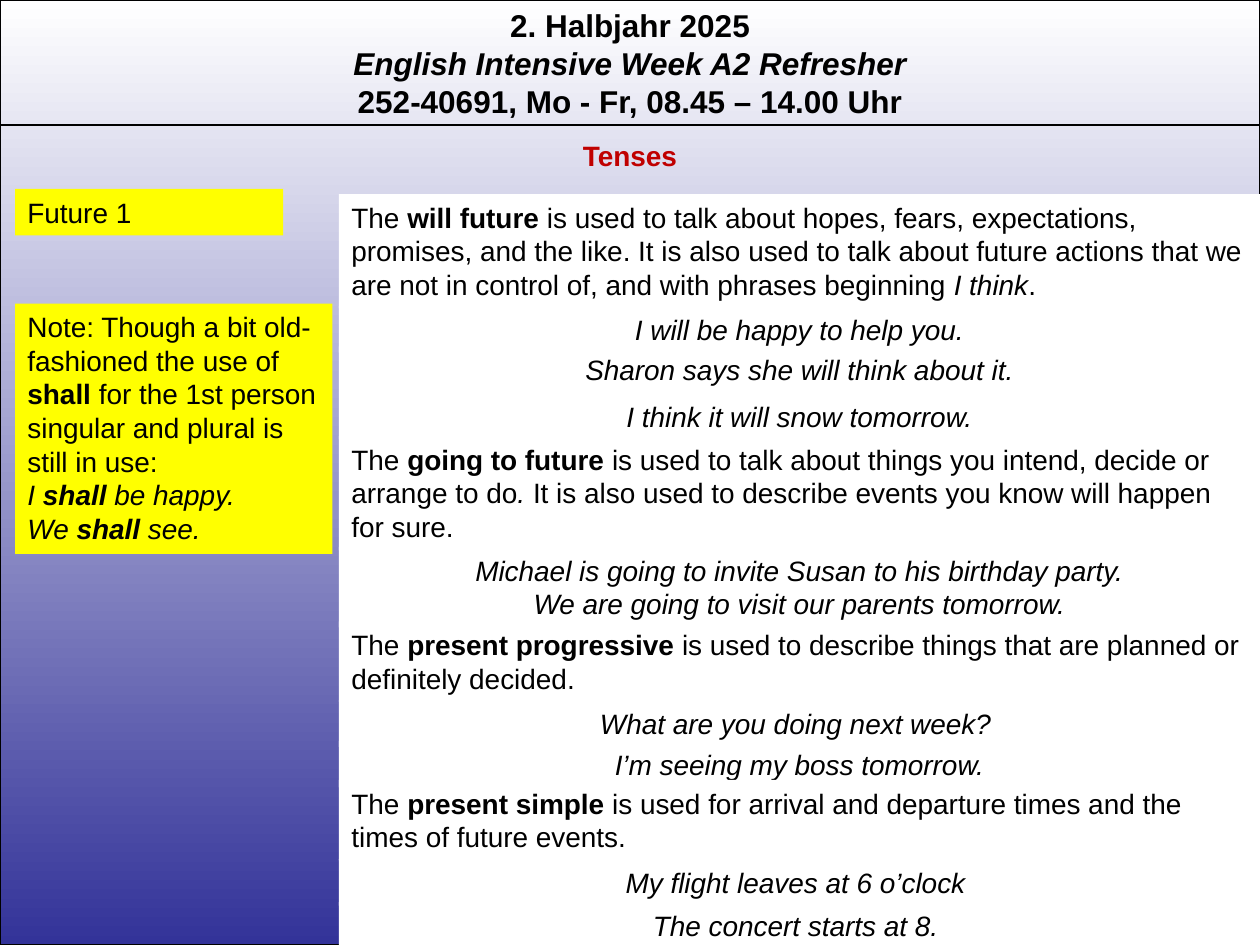
from dataclasses import dataclass

from lxml import etree
from pptx import Presentation
from pptx.dml.color import RGBColor
from pptx.enum import shapes, text
from pptx.oxml.ns import qn
from pptx.util import Pt


@dataclass(frozen=True)
class Theme:
    font: str = "Arial"
    title_size: int = 18
    body_size: int = 16
    ink: str = "000000"
    accent: str = "C00000"
    paper: str = "FFFFFF"
    mark: str = "FFFF00"
    deep: str = "333399"
    line: float = 0.75


LEFT, CENTER = text.PP_ALIGN.LEFT, text.PP_ALIGN.CENTER
WIDTH, HEIGHT = 720, 540


def box_height(lines):
    return 7.2 + 19.4 * lines


class SlideBuilder:
    def __init__(self, prs, theme):
        self.theme = theme
        self.s = prs.slides.add_slide(prs.slide_layouts[5])

    def set_text(self, sp, paragraphs, align=LEFT, size=None, color=None, bold=False):
        """Fill a shape; a paragraph is a list of (text, style), style holding b and/or i."""
        tf = sp.text_frame
        frame_format = {"word_wrap": True, "auto_size": text.MSO_AUTO_SIZE.SHAPE_TO_FIT_TEXT,
                        "vertical_anchor": text.MSO_ANCHOR.TOP}
        for name, value in frame_format.items():
            setattr(tf, name, value)
        for i, runs in enumerate(paragraphs):
            p = tf.paragraphs[0] if i == 0 else tf.add_paragraph()
            p.alignment = align
            for words, style in runs:
                r = p.add_run()
                r.text = words
                font_format = {"name": self.theme.font, "size": Pt(size or self.theme.body_size),
                               "bold": bold or "b" in style, "italic": "i" in style}
                for name, value in font_format.items():
                    setattr(r.font, name, value)
                r.font.color.rgb = RGBColor.from_string(color or self.theme.ink)

    def title(self, paragraphs, height):
        sp = self.s.shapes.title
        place = {"left": 0, "top": 0, "width": Pt(WIDTH), "height": Pt(height)}
        for name, value in place.items():
            setattr(sp, name, value)
        self.set_text(sp, paragraphs, CENTER, self.theme.title_size, bold=True)

    def rect(self, left, top, width, height):
        sp = self.s.shapes.add_shape(shapes.MSO_SHAPE.RECTANGLE,
                                     Pt(left), Pt(top), Pt(width), Pt(height))
        sp.shadow.inherit = False
        return sp

    def backdrop(self):
        """Full-slide gradient panel, placed behind the title."""
        sp = self.rect(0, 0, WIDTH, HEIGHT)
        sp.fill.gradient()
        sp.fill.gradient_angle = 270
        colors = (self.theme.paper, self.theme.deep)
        for position, (stop, color) in enumerate(zip(sp.fill.gradient_stops, colors)):
            stop.position = position
            stop.color.rgb = RGBColor.from_string(color)
        self.outline(sp)
        self.s.shapes.title.element.addprevious(sp.element)

    def outline(self, sp):
        sp.line.color.rgb = RGBColor.from_string(self.theme.ink)
        sp.line.width = Pt(self.theme.line)

    def rule(self, y):
        line = self.s.shapes.add_connector(shapes.MSO_CONNECTOR.STRAIGHT,
                                           0, Pt(y), Pt(WIDTH), Pt(y))
        self.outline(line)
        etree.SubElement(line.element.spPr, qn("a:effectLst"))

    def heading(self, words, top):
        sp = self.s.shapes.add_textbox(0, Pt(top), Pt(WIDTH), Pt(box_height(1)))
        self.set_text(sp, [[(words, "")]], CENTER, color=self.theme.accent, bold=True)

    def panel(self, left, top, width, lines, fill, paragraphs, align=LEFT):
        sp = self.rect(left, top, width, box_height(lines))
        sp.fill.solid()
        sp.fill.fore_color.rgb = RGBColor.from_string(fill)
        sp.line.fill.background()
        self.set_text(sp, paragraphs, align)


HEADER = [
    [("2. Halbjahr 2025", "")],
    [("English Intensive Week A2 Refresher", "i")],
    [("252-40691, Mo - Fr, 08.45 – 14.00 Uhr", "")],
]

# top, number of lines, runs
RULES = [
    (110.9, 3, [
        ("The ", ""), ("will future ", "b"),
        ("is used to talk about hopes, fears, expectations, promises, and the like. "
         "It is also used to talk about future actions that we are not in control of, "
         "and with phrases beginning ", ""),
        ("I think", "i"), (".", "")]),
    (249.1, 3, [
        ("The ", ""), ("going to future ", "b"),
        ("is used to talk about things you intend, decide or arrange to do", ""), (". ", "i"),
        ("It is also used to describe events you know will happen for sure.", "")]),
    (355, 2, [
        ("The ", ""), ("present progressive ", "b"),
        ("is used to describe things that are planned or definitely decided.", "")]),
    (445.7, 2, [
        ("The ", ""), ("present simple ", "b"),
        ("is used for arrival and departure times and the times of future events.", "")]),
]

# top, sentences
EXAMPLES = [
    (175, ["I will be happy to help you."]),
    (198, ["Sharon says she will think about it."]),
    (224.6, ["I think it will snow tomorrow."]),
    (312.5, ["Michael is going to invite Susan to his birthday party.",
             "We are going to visit our parents tomorrow."]),
    (400.3, ["What are you doing next week? "]),
    (423.4, ["I’m seeing my boss tomorrow."]),
    (491, ["My flight leaves at 6 o’clock "]),
    (515.5, ["The concert starts at 8. "]),
]

NOTE = [
    [("Note: Though a bit old-fashioned the use of ", ""), ("shall ", "b"),
     ("for the 1st person singular and plural is still in use:", "")],
    [("I ", "i"), ("shall ", "bi"), ("be happy.", "i")],
    [("We ", "i"), ("shall ", "bi"), ("see.", "i")],
]


def main():
    prs = Presentation()
    prs.slide_width, prs.slide_height = Pt(WIDTH), Pt(HEIGHT)
    theme = Theme()
    b = SlideBuilder(prs, theme)

    b.backdrop()
    b.title(HEADER, 72.7)
    b.rule(71.4)
    b.heading("Tenses", 75.6)

    side, column = 8.6, 193.7
    b.panel(side, 108, 153.2, 1, theme.mark, [[("Future 1", "")]])
    for top, sentences in EXAMPLES:
        b.panel(column, top, WIDTH - column, len(sentences), theme.paper,
                [[(sentence, "i")] for sentence in sentences], CENTER)
    for top, lines, runs in RULES:
        b.panel(column, top, WIDTH - column, lines, theme.paper, [runs])
    b.panel(side, 173.5, 181.4, 7, theme.mark, NOTE)

    prs.save("out.pptx")


if __name__ == "__main__":
    main()
